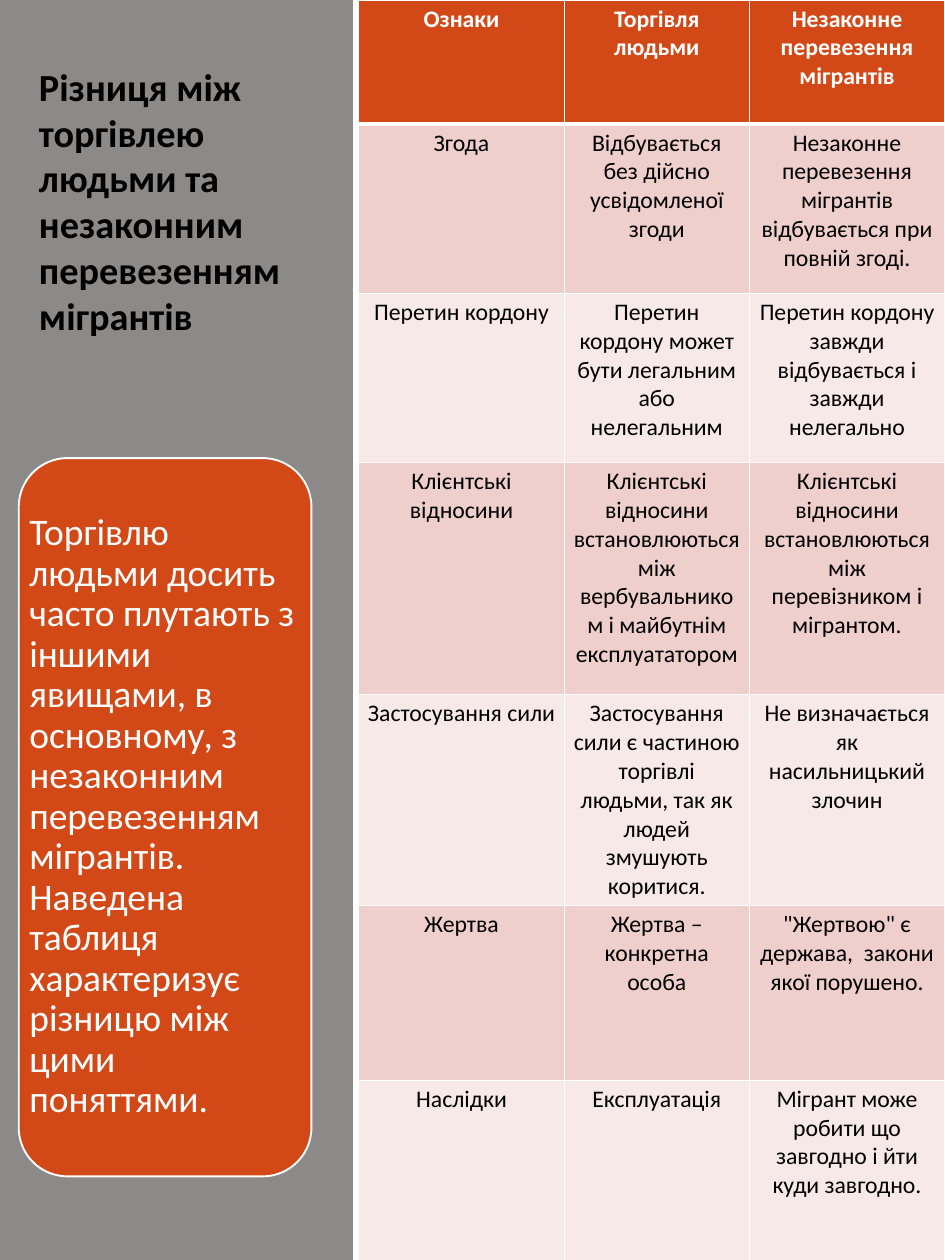
import pptx
import pptx.util
import pptx.dml.color
import pptx.enum.shapes
import pptx.enum.text
import lxml.etree
import pptx.oxml.ns

Cm = pptx.util.Cm
Pt = pptx.util.Pt
RGBColor = pptx.dml.color.RGBColor
ALIGN = pptx.enum.text.PP_ALIGN
ANCHOR = pptx.enum.text.MSO_ANCHOR
SHAPE = pptx.enum.shapes.MSO_SHAPE
qn = pptx.oxml.ns.qn

TITLE = "Різниця між торгівлею людьми та незаконним перевезенням мігрантів"
EXPLANATION = (
    "Торгівлю людьми досить часто плутають з іншими явищами, в основному, "
    "з незаконним перевезенням мігрантів. Наведена таблиця характеризує "
    "різницю між цими поняттями."
)
COMPARISON = [
    ("Ознаки", "Торгівля людьми", "Незаконне перевезення мігрантів"),
    ("Згода", "Відбувається без дійсно усвідомленої згоди",
     "Незаконне перевезення мігрантів відбувається при повній згоді."),
    ("Перетин кордону", "Перетин кордону может бути легальним або нелегальним",
     "Перетин кордону завжди відбувається і завжди нелегально"),
    ("Клієнтські відносини",
     "Клієнтські відносини встановлюються між вербувальником і майбутнім експлуататором",
     "Клієнтські відносини встановлюються між перевізником і мігрантом."),
    ("Застосування сили",
     "Застосування сили є частиною торгівлі людьми, так як людей змушують коритися.",
     "Не визначається як насильницький злочин"),
    ("Жертва", "Жертва – конкретна особа",
     "\"Жертвою\" є держава,  закони якої порушено."),
    ("Наслідки", "Експлуатація",
     "Мігрант може робити що завгодно і йти куди завгодно."),
]
COLUMN_WIDTHS = [5.79, 5.23, 5.51]
ROW_HEIGHTS = [3.5, 4.78, 4.78, 6.55, 5.92, 4.93, 5.38]

FONT = "Calibri"
BLACK = RGBColor(0x00, 0x00, 0x00)
WHITE = RGBColor(0xFF, 0xFF, 0xFF)
ORANGE = RGBColor(0xD3, 0x48, 0x17)
GREY = RGBColor(0x69, 0x64, 0x64)
ROSE = RGBColor(0xEF, 0xCF, 0xCC)
PALE_ROSE = RGBColor(0xF7, 0xE9, 0xE8)


def write(paragraph, text, size, color, bold=False):
    run = paragraph.add_run()
    run.text = text
    run.font.name = FONT
    run.font.size = Pt(size)
    run.font.bold = bold
    run.font.color.rgb = color


def set_frame(frame, anchor, side, vertical):
    frame.word_wrap = True
    frame.auto_size = pptx.enum.text.MSO_AUTO_SIZE.NONE
    frame.vertical_anchor = anchor
    frame.margin_left = frame.margin_right = Cm(side)
    frame.margin_top = frame.margin_bottom = Cm(vertical)


def add_filled(slide, preset, box, color):
    shape = slide.shapes.add_shape(preset, *box)
    shape.shadow.inherit = False
    shape.fill.solid()
    shape.fill.fore_color.rgb = color
    return shape


def add_borders(cell, bottom_width):
    properties = cell._tc.get_or_add_tcPr()
    widths = {"a:lnL": 1, "a:lnR": 1, "a:lnT": 1, "a:lnB": bottom_width}
    for position, (side, width) in enumerate(widths.items()):
        border = lxml.etree.Element(qn(side), w=str(Pt(width)))
        fill = lxml.etree.SubElement(border, qn("a:solidFill"))
        lxml.etree.SubElement(fill, qn("a:srgbClr"), val=str(WHITE))
        properties.insert(position, border)


def add_side_panel(slide, height):
    panel = add_filled(slide, SHAPE.RECTANGLE, (0, 0, Cm(9.96), height), GREY)
    panel.line.fill.background()
    color = panel._element.spPr.find(".//" + qn("a:srgbClr"))
    lxml.etree.SubElement(color, qn("a:alpha"), val="76000")
    slide.shapes._spTree.insert(2, panel._element)


def fill_title(title):
    title.left, title.top, title.width, title.height = Cm(0.74), Cm(0.79), Cm(8.26), Cm(8.94)
    set_frame(title.text_frame, ANCHOR.BOTTOM, 0.36, 0.18)
    heading = title.text_frame.paragraphs[0]
    heading.alignment = ALIGN.LEFT
    heading.space_before = Pt(5.6)
    write(heading, TITLE, 30.6, BLACK, True)


def add_explanation(slide):
    box = (Cm(0.53), Cm(12.93), Cm(8.26), Cm(20.27))
    card = add_filled(slide, SHAPE.ROUNDED_RECTANGLE, box, ORANGE)
    card.line.color.rgb = WHITE
    card.line.width = Pt(1.5)
    explanation = slide.shapes.add_textbox(*box).text_frame
    set_frame(explanation, ANCHOR.MIDDLE, 0.3, 0.3)
    explanation.paragraphs[0].line_spacing = 0.9
    write(explanation.paragraphs[0], EXPLANATION, 30, WHITE)


def add_comparison(slide):
    comparison = slide.shapes.add_table(
        len(COMPARISON), len(COLUMN_WIDTHS), Cm(10.13), 0,
        Cm(sum(COLUMN_WIDTHS)), Cm(sum(ROW_HEIGHTS))).table
    for column, width in zip(comparison.columns, COLUMN_WIDTHS):
        column.width = Cm(width)
    for row, height in zip(comparison.rows, ROW_HEIGHTS):
        row.height = Cm(height)
    for row_index, texts in enumerate(COMPARISON):
        is_header = row_index == 0
        band = ORANGE if is_header else ROSE if row_index % 2 else PALE_ROSE
        for column_index, text in enumerate(texts):
            cell = comparison.cell(row_index, column_index)
            cell.fill.solid()
            cell.fill.fore_color.rgb = band
            add_borders(cell, 3 if is_header else 1)
            paragraph = cell.text_frame.paragraphs[0]
            paragraph.alignment = ALIGN.CENTER
            write(paragraph, text, 19, WHITE if is_header else BLACK, is_header)


def main():
    presentation = pptx.Presentation()
    presentation.slide_width = Cm(26.67)
    presentation.slide_height = Cm(35.56)
    slide = presentation.slides.add_slide(presentation.slide_layouts[5])
    add_side_panel(slide, presentation.slide_height)
    fill_title(slide.shapes.title)
    add_comparison(slide)
    add_explanation(slide)
    presentation.save("out.pptx")


if __name__ == "__main__":
    main()
